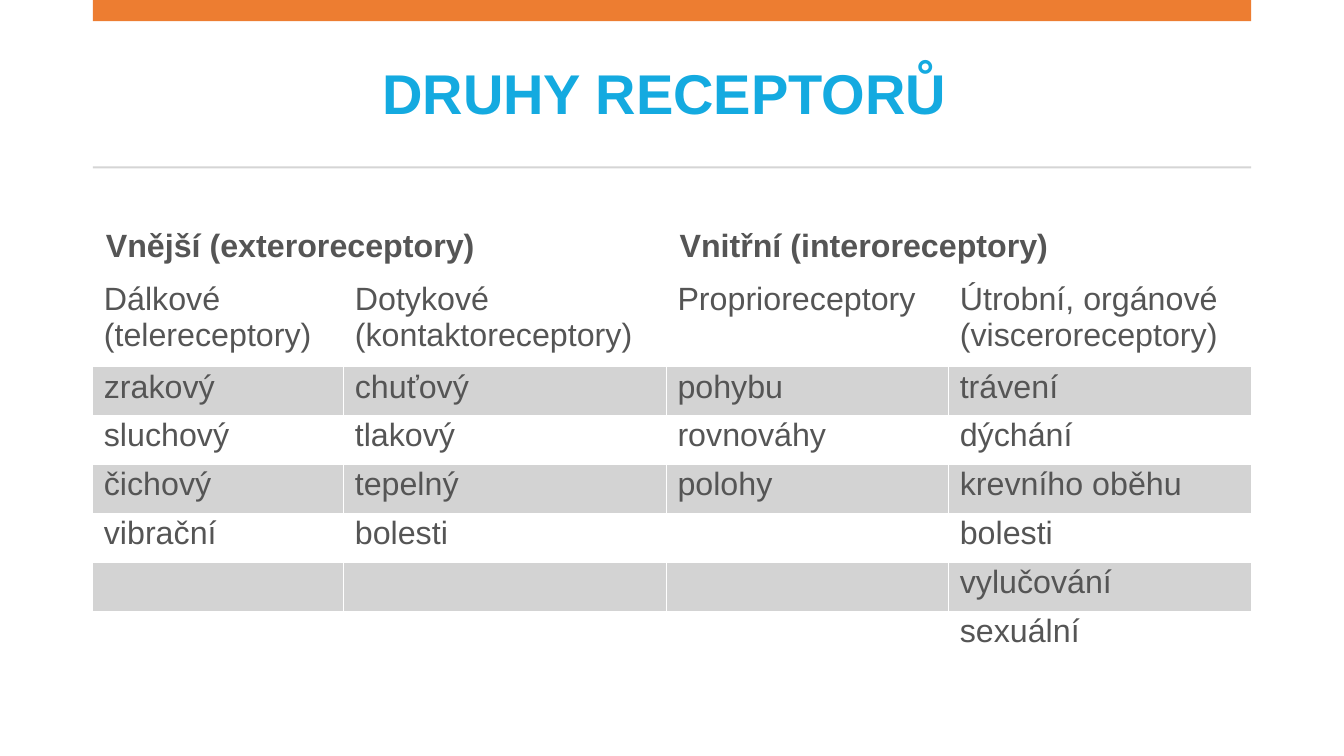
from lxml import etree
from pptx import Presentation
from pptx import util as u
from pptx.dml.color import RGBColor
from pptx.enum import shapes, text
from pptx.oxml import parse_xml
from pptx.oxml.ns import nsdecls, qn

HEADINGS = ["Vnější (exteroreceptory)", "", "Vnitřní (interoreceptory)", ""]
RECEPTORS = [
    ["Dálkové\n(telereceptory)", "Dotykové\n(kontaktoreceptory)",
     "Proprioreceptory", "Útrobní, orgánové\n(visceroreceptory)"],
    ["zrakový", "chuťový", "pohybu", "trávení"],
    ["sluchový", "tlakový", "rovnováhy", "dýchání"],
    ["čichový", "tepelný", "polohy", "krevního oběhu"],
    ["vibrační", "bolesti", "", "bolesti"],
    ["", "", "", "vylučování"],
    ["", "", "", "sexuální"],
]
COLS = [2.49, 3.2, 2.8, 3]
LEFT, WIDTH = 0.92, 11.49


def rgb(value):
    return RGBColor.from_string(value)


class Deck:
    """Holds the style and the current slide and draws its elements."""

    font = "Arial"
    orange, blue, gray = "ED7D31", "14AAE0", "555555"
    rule, band, border = "D5D5D5", "D3D3D3", "FFFFFF"

    def __init__(self, prs):
        self.s = prs.slides.add_slide(prs.slide_layouts[6])

    def label(self, p, words, size, color, bold=False):
        p.text = words
        style = {"name": self.font, "size": u.Pt(size), "bold": bold}
        for r in p.runs:
            for key, value in style.items():
                setattr(r.font, key, value)
            r.font.color.rgb = rgb(color)

    def bar(self, top, height, color):
        sp = self.s.shapes.add_shape(
            shapes.MSO_SHAPE.RECTANGLE, u.Inches(LEFT), u.Inches(top),
            u.Inches(WIDTH), u.Inches(height))
        sp.shadow.inherit = False
        sp.fill.solid()
        sp.fill.fore_color.rgb = rgb(color)
        sp.line.fill.background()

    def title(self, words, top, height):
        sp = self.s.shapes.add_textbox(
            u.Inches(LEFT), u.Inches(top), u.Inches(WIDTH), u.Inches(height))
        tf = sp.text_frame
        tf.word_wrap = True
        tf.vertical_anchor = text.MSO_ANCHOR.MIDDLE
        p = tf.paragraphs[0]
        p.alignment = text.PP_ALIGN.CENTER
        p.line_spacing = 0.9
        self.label(p, words, 40, self.blue, True)

    def cell(self, cell, words, heading, banded):
        side, edge = (0.13, 0.06) if heading else (0.11, 0.02)
        margins = {"margin_left": side, "margin_right": side,
                   "margin_top": edge, "margin_bottom": edge}
        for key, value in margins.items():
            setattr(cell, key, u.Inches(value))
        if banded:
            cell.fill.solid()
            cell.fill.fore_color.rgb = rgb(self.band)
        else:
            cell.fill.background()
        tcPr = cell._tc.get_or_add_tcPr()
        for i, tag in enumerate(["lnL", "lnR", "lnT", "lnB"]):
            ln = parse_xml(f'<a:{tag} {nsdecls("a")} w="{u.Pt(0.6)}"/>')
            fill = etree.SubElement(ln, qn("a:solidFill"))
            etree.SubElement(fill, qn("a:srgbClr"), val=self.border)
            tcPr.insert(i, ln)
        if words:
            self.label(cell.text_frame.paragraphs[0], words, 23, self.gray, heading)

    def table(self, rows, top, height, head_heights):
        frame = self.s.shapes.add_table(
            len(rows), len(COLS), u.Inches(LEFT), u.Inches(top),
            u.Inches(WIDTH), u.Inches(height))
        tbl = frame.table
        tbl.first_row = tbl.horz_banding = False
        for col, width in zip(tbl.columns, COLS):
            col.width = u.Inches(width)
        body = len(rows) - len(head_heights)
        step = (height - sum(head_heights)) / body
        for row, h in zip(tbl.rows, head_heights + [step] * body):
            row.height = u.Inches(h)
        for c in (0, 2):
            tbl.cell(0, c).merge(tbl.cell(0, c + 1))
        for i, row in enumerate(rows):
            for j, words in enumerate(row):
                self.cell(tbl.cell(i, j), words, i == 0, i > 0 and i % 2 == 0)


def main():
    prs = Presentation()
    prs.slide_width, prs.slide_height = u.Inches(13.33), u.Inches(7.5)
    deck = Deck(prs)
    deck.title("DRUHY RECEPTORŮ ", 0.37, 1.18)
    deck.bar(0, 0.21, deck.orange)
    deck.bar(1.65, 0.02, deck.rule)
    deck.table([HEADINGS] + RECEPTORS, 2.2, 4.35, [0.57, 0.87])
    prs.save("out.pptx")


if __name__ == "__main__":
    main()
